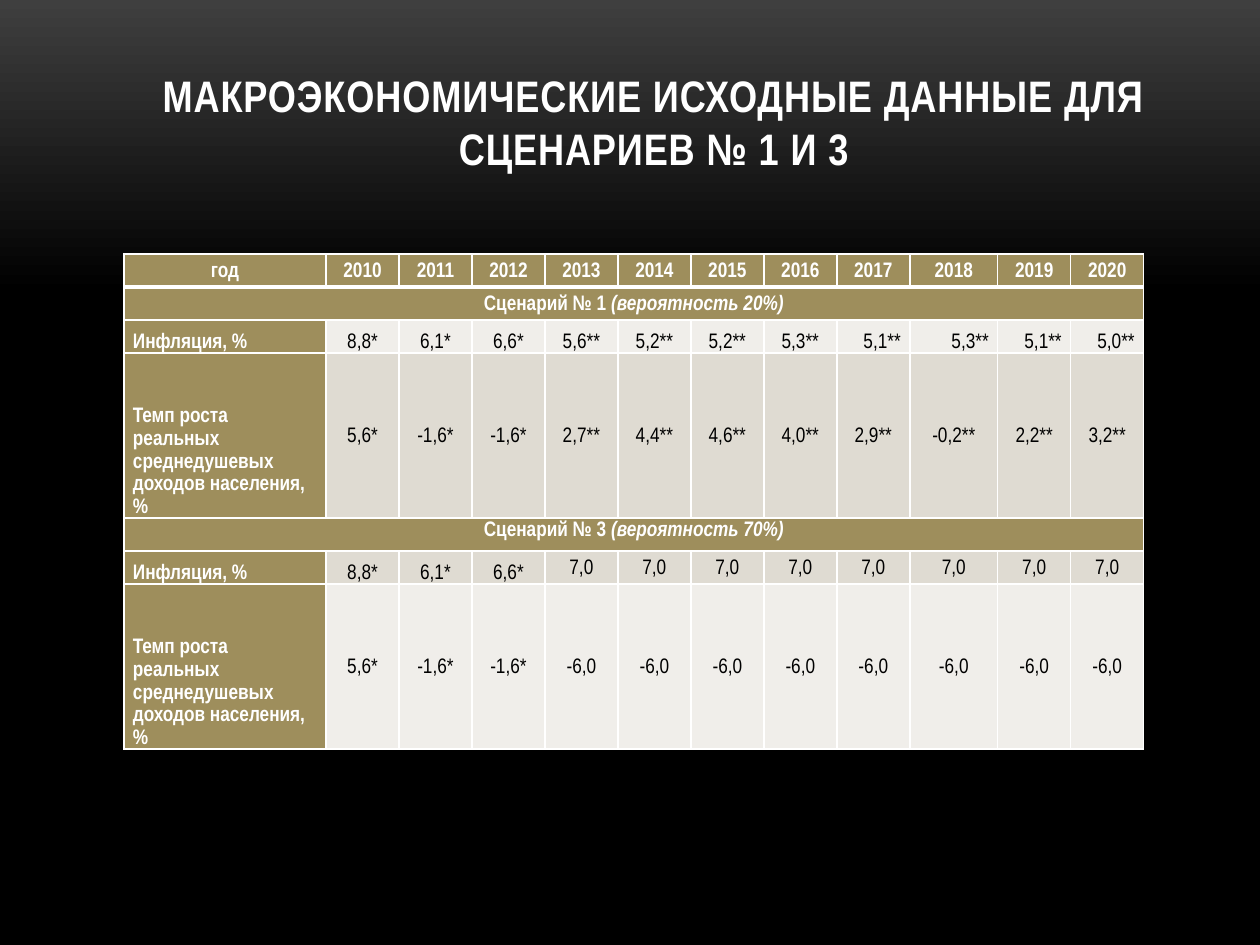
from copy import deepcopy

from lxml import etree
from pptx import Presentation
from pptx import util as u
from pptx.dml.color import RGBColor
from pptx.enum import text
from pptx.oxml.ns import qn

EMU_PER_PX = 914400 / 126
FONT = "Arial Narrow"
COLORS = {
    "glow": "3F3F3F",
    "black": "000000",
    "white": "FFFFFF",
    "gold": "9E8E5C",
    "light": "F0EEEA",
    "dark": "DFDBD2",
}
ALIGN = {"l": text.PP_ALIGN.LEFT, "c": text.PP_ALIGN.CENTER, "r": text.PP_ALIGN.RIGHT}
ANCHOR = {"t": text.MSO_ANCHOR.TOP, "m": text.MSO_ANCHOR.MIDDLE, "b": text.MSO_ANCHOR.BOTTOM}

INFLATION = "Инфляция, %"
INCOME = "Темп роста реальных среднедушевых доходов населения, %"
COLUMN_WIDTHS = [202] + [73] * 8 + [88] + [73] * 2
ROW_HEIGHTS = [33, 33, 33, 165, 33, 33, 165]

# Row in table: label, values, band, anchor and alignment of each value
INDICATORS = {
    2: (INFLATION, "8,8* 6,1* 6,6* 5,6** 5,2** 5,2** 5,3** 5,1** 5,3** 5,1** 5,0**".split(),
        "light", "b" * 11, "c" * 7 + "r" * 4),
    3: (INCOME, "5,6* -1,6* -1,6* 2,7** 4,4** 4,6** 4,0** 2,9** -0,2** 2,2** 3,2**".split(),
        "dark", "m" * 11, "c" * 11),
    5: (INFLATION, ["8,8*", "6,1*", "6,6*"] + ["7,0"] * 8,
        "dark", "b" * 3 + "m" * 8, "c" * 11),
    6: (INCOME, ["5,6*", "-1,6*", "-1,6*"] + ["-6,0"] * 8,
        "light", "m" * 11, "c" * 11),
}
# Row in table: scenario, probability, anchor
SCENARIOS = {
    1: ("Сценарий № 1 ", "(вероятность 20%)", "m"),
    4: ("Сценарий № 3 ", "(вероятность 70%)", "t"),
}


def px(length):
    return u.Emu(round(length * EMU_PER_PX))


def rgb(name):
    return RGBColor.from_string(COLORS[name])


def add_run(paragraph, words, size, color, bold=False, italic=False):
    run = paragraph.add_run()
    run.text = words
    font = run.font
    font.name, font.size, font.bold, font.italic = FONT, u.Pt(size), bold, italic
    font.color.rgb = rgb(color)
    return run


def paint_background(slide):
    fill = slide.background.fill
    fill.gradient()
    fill.gradient_angle = 270
    for stop, position, color in zip(fill.gradient_stops, (0, 0.31), ("glow", "black")):
        stop.position = position
        stop.color.rgb = rgb(color)
    # Hold black down to the bottom edge
    fade_end = slide.element.findall(".//" + qn("a:gs"))[-1]
    bottom = deepcopy(fade_end)
    bottom.set("pos", "100000")
    fade_end.addnext(bottom)


def add_title(slide, words):
    title = slide.shapes.title
    title.left, title.top, title.width, title.height = px(134), px(55), px(1040), px(126)
    frame = title.text_frame
    frame.word_wrap = True
    frame.auto_size = text.MSO_AUTO_SIZE.NONE
    frame.vertical_anchor = ANCHOR["b"]
    heading = frame.paragraphs[0]
    heading.alignment = ALIGN["c"]
    run = add_run(heading, words, 25.2, "white", bold=True)
    run.font._element.set("spc", "50")


def set_borders(cell, top=1, bottom=1):
    properties = cell._tc.get_or_add_tcPr()
    for side, width in (("L", 1), ("R", 1), ("T", top), ("B", bottom)):
        line = etree.SubElement(properties, qn("a:ln" + side), w=str(u.Pt(width)))
        solid = etree.SubElement(line, qn("a:solidFill"))
        etree.SubElement(solid, qn("a:srgbClr"), val=COLORS["white"])


def fill_cell(cell, runs, fill, anchor="m", align="c"):
    """Each run is (words, italic); gold cells carry bold white text."""
    cell.fill.solid()
    cell.fill.fore_color.rgb = rgb(fill)
    cell.margin_left = cell.margin_right = px(9)
    cell.margin_top = cell.margin_bottom = 0
    cell.vertical_anchor = ANCHOR[anchor]
    paragraph = cell.text_frame.paragraphs[0]
    paragraph.alignment = ALIGN[align]
    paragraph.line_spacing = 1.15
    is_heading = fill == "gold"
    for words, italic in runs:
        add_run(paragraph, words, 12, "white" if is_heading else "black", is_heading, italic)


def add_forecast_table(slide):
    table = slide.shapes.add_table(
        len(ROW_HEIGHTS), len(COLUMN_WIDTHS), px(124), px(254),
        px(sum(COLUMN_WIDTHS)), px(sum(ROW_HEIGHTS))).table
    for column, width in zip(table.columns, COLUMN_WIDTHS):
        column.width = px(width)
    for r, height in enumerate(ROW_HEIGHTS):
        table.rows[r].height = px(height)
        for cell in table.rows[r].cells:
            set_borders(cell, top=3 if r == 1 else 1, bottom=3 if r == 0 else 1)

    # Years
    for c, heading in enumerate(["год", *map(str, range(2010, 2021))]):
        fill_cell(table.cell(0, c), [(heading, False)], "gold")

    # Scenario bands across the table
    for r, (scenario, probability, anchor) in SCENARIOS.items():
        table.cell(r, 0).merge(table.cell(r, len(COLUMN_WIDTHS) - 1))
        fill_cell(table.cell(r, 0), [(scenario, False), (probability, True)], "gold", anchor)

    # Indicators by year
    for r, (label, values, band, anchors, aligns) in INDICATORS.items():
        fill_cell(table.cell(r, 0), [(label, False)], "gold", "b", "l")
        for c, (value, anchor, align) in enumerate(zip(values, anchors, aligns), 1):
            fill_cell(table.cell(r, c), [(value, False)], band, anchor, align)


def main():
    deck = Presentation()
    deck.slide_width, deck.slide_height = px(1260), px(945)
    slide = deck.slides.add_slide(deck.slide_layouts[5])
    paint_background(slide)
    add_title(slide, "МАКРОЭКОНОМИЧЕСКИЕ ИСХОДНЫЕ ДАННЫЕ ДЛЯ СЦЕНАРИЕВ № 1 И 3")
    add_forecast_table(slide)
    deck.save("out.pptx")


if __name__ == "__main__":
    main()
